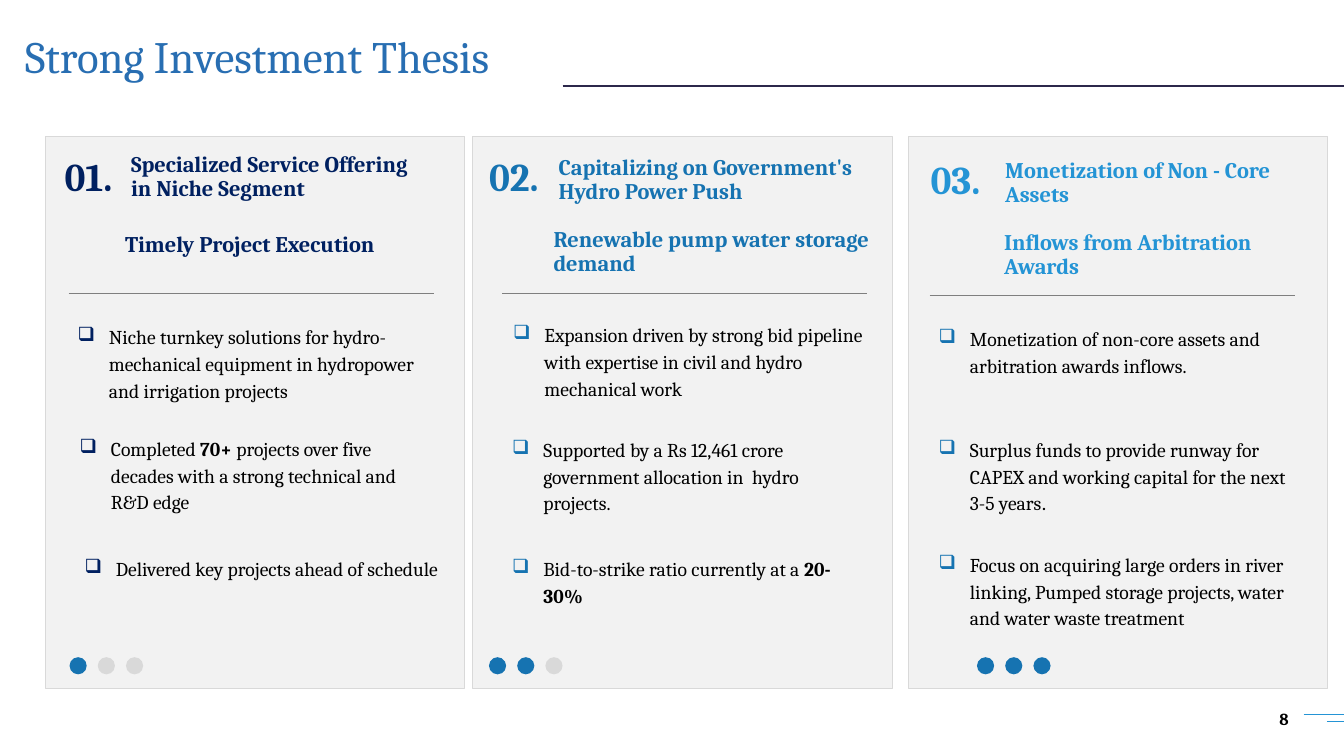
from dataclasses import dataclass
from typing import NamedTuple

from lxml.etree import SubElement
from pptx import Presentation
from pptx.dml.color import RGBColor
from pptx.enum.shapes import MSO_CONNECTOR as Connector, MSO_SHAPE as Preset
from pptx.enum.text import MSO_ANCHOR as Anchor, PP_ALIGN as Align
from pptx.oxml.ns import qn
from pptx.util import Inches, Pt


@dataclass(frozen=True)
class Theme:
    font: str = "Cambria"
    alternate_font: str = "Calibri"
    title: str = "286EB2"
    title_line: str = "2C284B"
    navy: str = "002060"
    blue: str = "1673B1"
    sky: str = "2494D5"
    black: str = "000000"
    divider: str = "7F7F7F"
    card: str = "F2F2F2"
    card_edge: str = "D9D9D9"
    title_size: float = 32
    number_size: float = 28
    heading_size: float = 16
    body_size: float = 14
    page_size: float = 12


THEME = Theme()


class Box(NamedTuple):
    left: float
    top: float
    width: float
    height: float

    def lengths(self) -> list:
        return [Inches(value) for value in self]


class Run(NamedTuple):
    text: str
    bold: bool = False
    font: str = THEME.font


class Heading(NamedTuple):
    text: str
    box: Box


class Bullet(NamedTuple):
    left: float
    top: float
    width: float
    runs: tuple


@dataclass(frozen=True)
class Card:
    left: float
    number: str
    number_left: float
    number_top: float
    color: str
    bullet_color: str
    divider_left: float
    divider_top: float
    dots_left: float
    dots_filled: int
    headings: tuple
    bullets: tuple


CARDS = (
    Card(0.45, "01.", 0.64, 1.51, THEME.navy, THEME.navy, 0.68, 2.91, 0.69, 1, (
        Heading("Specialized Service Offering in Niche Segment", Box(1.3, 1.52, 2.78, 0.48)),
        Heading("Timely Project Execution", Box(1.24, 2.31, 2.78, 0.24)),
    ), (
        Bullet(0.77, 3.19, 3.52, (Run(
            "Niche turnkey solutions for hydro-mechanical equipment in hydropower "
            "and irrigation projects"),)),
        Bullet(0.79, 4.3, 3.45, (
            Run("Completed "), Run("70+", True),
            Run(" projects over five decades with a strong technical and R&D edge"))),
        Bullet(0.84, 5.49, 3.52, (Run("Delivered key projects ahead of schedule"),)),
    )),
    Card(4.69, "02.", 4.85, 1.51, THEME.blue, THEME.blue, 4.98, 2.91, 4.85, 2, (
        Heading("Capitalizing on Government's Hydro Power Push", Box(5.54, 1.55, 3.46, 0.48)),
        Heading("Renewable pump water storage demand", Box(5.49, 2.26, 3.2, 0.48)),
    ), (
        Bullet(5.09, 3.17, 3.5, (Run(
            "Expansion driven by strong bid pipeline with expertise in civil "
            "and hydro mechanical work"),)),
        Bullet(5.08, 4.31, 3.2, (Run(
            "Supported by a Rs 12,461 crore government allocation in  hydro projects."),)),
        Bullet(5.08, 5.49, 3.2, (
            Run("Bid-to-strike ratio currently at a "), Run("20-30%", True))),
    )),
    Card(9.01, "03.", 9.23, 1.54, THEME.sky, THEME.blue, 9.22, 2.93, 9.69, 3, (
        Heading("Monetization of Non - Core Assets", Box(9.97, 1.58, 2.79, 0.48)),
        Heading("Inflows from Arbitration Awards", Box(9.96, 2.29, 3.11, 0.48)),
    ), (
        Bullet(9.31, 3.21, 3.5, (Run(
            "Monetization of non-core assets and arbitration awards inflows."),)),
        Bullet(9.31, 4.31, 3.5, (
            Run("Surplus funds to provide runway for CAPEX and working capital "
                "for the next 3-5 years"),
            Run(".", font=THEME.alternate_font))),
        Bullet(9.31, 5.45, 3.57, (Run(
            "Focus on acquiring large orders in river linking, Pumped storage "
            "projects, water and water waste treatment"),)),
    )),
)


def rgb(color: str) -> RGBColor:
    return RGBColor.from_string(color)


def add_text(slide, box: Box, runs: tuple, size: float, color: str,
             anchor=Anchor.TOP, inset: bool = False, spacing: float = 1.0):
    """Add a text box with one paragraph and return that paragraph."""
    frame = slide.shapes.add_textbox(*box.lengths()).text_frame
    frame.word_wrap = True
    frame.vertical_anchor = anchor
    if not inset:
        frame.margin_left = frame.margin_right = 0
        frame.margin_top = frame.margin_bottom = 0
    paragraph = frame.paragraphs[0]
    paragraph.line_spacing = spacing
    for item in runs:
        run = paragraph.add_run()
        run.text = item.text
        run.font.name = item.font
        run.font.size = Pt(size)
        run.font.bold = item.bold
        run.font.color.rgb = rgb(color)
    return paragraph


def add_line(slide, left: float, right: float, top: float, color: str, width: float) -> None:
    line = slide.shapes.add_connector(
        Connector.STRAIGHT, Inches(left), Inches(top), Inches(right), Inches(top))
    line.line.color.rgb = rgb(color)
    line.line.width = Pt(width)
    SubElement(line._element.spPr, qn("a:effectLst"))


def add_filled(slide, preset, box: Box, fill: str, edge: str = ""):
    shape = slide.shapes.add_shape(preset, *box.lengths())
    shape.shadow.inherit = False
    shape.fill.solid()
    shape.fill.fore_color.rgb = rgb(fill)
    if edge:
        shape.line.color.rgb = rgb(edge)
        shape.line.width = Pt(0)
    else:
        shape.line.fill.background()


def add_bullet(slide, bullet: Bullet, color: str) -> None:
    box = Box(bullet.left, bullet.top, bullet.width, 0.79)
    paragraph = add_text(slide, box, bullet.runs, THEME.body_size, THEME.black, spacing=1.14)
    paragraph.space_after = Pt(6)
    properties = paragraph._p.get_or_add_pPr()
    properties.set("marL", str(Inches(0.31)))
    properties.set("indent", str(-Inches(0.31)))
    bullet_color = SubElement(properties, qn("a:buClr"))
    SubElement(bullet_color, qn("a:srgbClr"), val=color)
    SubElement(properties, qn("a:buChar"), char="❑")


def add_card(slide, card: Card) -> None:
    add_filled(slide, Preset.RECTANGLE, Box(card.left, 1.35, 4.16, 5.48),
               THEME.card, THEME.card_edge)
    # Number and headings
    add_text(slide, Box(card.number_left, card.number_top, 0.61, 0.47),
             (Run(card.number, True),), THEME.number_size, card.color)
    for heading in card.headings:
        add_text(slide, heading.box, (Run(heading.text, True),), THEME.heading_size,
                 card.color, Anchor.MIDDLE, spacing=0.9)
    add_line(slide, card.divider_left, card.divider_left + 3.62, card.divider_top,
             THEME.divider, 0.5)
    # Bullets
    for bullet in card.bullets:
        add_bullet(slide, bullet, card.bullet_color)
    # Progress dots
    for index in range(3):
        fill = THEME.blue if index < card.dots_filled else THEME.card_edge
        add_filled(slide, Preset.OVAL, Box(card.dots_left + 0.28 * index, 6.52, 0.17, 0.17), fill)


def main() -> None:
    presentation = Presentation()
    presentation.slide_width = Inches(13.33)
    presentation.slide_height = Inches(7.5)
    slide = presentation.slides.add_slide(presentation.slide_layouts[6])
    # Page number and its lines
    add_line(slide, 12.93, 13.33, 7.09, THEME.sky, 0.5)
    add_line(slide, 13.16, 13.33, 7.16, THEME.sky, 0.5)
    page = add_text(slide, Box(9.67, 6.91, 3.21, 0.44), (Run("8", True),),
                    THEME.page_size, THEME.black, Anchor.MIDDLE, inset=True)
    page.alignment = Align.RIGHT
    # Title
    add_line(slide, 5.58, 13.33, 0.85, THEME.title_line, 1.5)
    add_text(slide, Box(0.15, 0.31, 6.82, 0.55), (Run("Strong Investment Thesis"),),
             THEME.title_size, THEME.title, Anchor.MIDDLE, inset=True, spacing=0.9)
    # Thesis cards
    for card in CARDS:
        add_card(slide, card)
    presentation.save("out.pptx")


if __name__ == "__main__":
    main()
